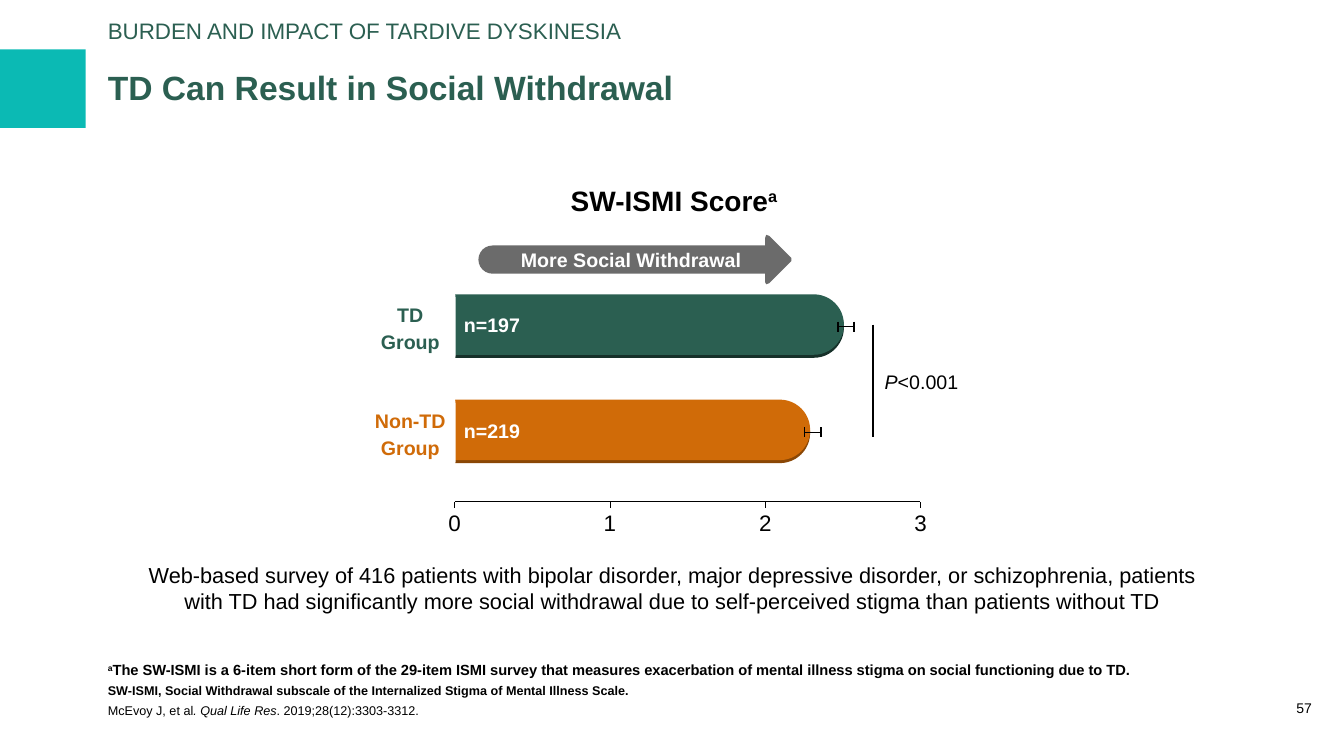
from dataclasses import dataclass

from lxml import etree
from pptx import Presentation
from pptx.chart.data import CategoryChartData
from pptx.dml.color import RGBColor
from pptx.enum.chart import XL_CHART_TYPE, XL_TICK_MARK
from pptx.enum.shapes import MSO_CONNECTOR, MSO_SHAPE
from pptx.enum.text import MSO_ANCHOR, PP_ALIGN
from pptx.oxml import parse_xml
from pptx.oxml.ns import nsdecls, qn
from pptx.util import Emu, Pt

PX = 9144  # 100 px to the inch
RECT, ROUNDED, ROUND_END = MSO_SHAPE.RECTANGLE, MSO_SHAPE.ROUNDED_RECTANGLE, MSO_SHAPE.ROUND_2_SAME_RECTANGLE
LEFT, CENTER = PP_ALIGN.LEFT, PP_ALIGN.CENTER
TOP, MIDDLE, BOTTOM = MSO_ANCHOR.TOP, MSO_ANCHOR.MIDDLE, MSO_ANCHOR.BOTTOM
BAR_CHART, STRAIGHT = XL_CHART_TYPE.BAR_CLUSTERED, MSO_CONNECTOR.STRAIGHT
TICK_OUTSIDE = XL_TICK_MARK.OUTSIDE


@dataclass(frozen=True)
class Theme:
    font: str = "Arial"
    teal: str = "0BBAB4"
    green: str = "2B5F51"
    dark_green: str = "163029"
    orange: str = "D06B08"
    dark_orange: str = "8A4705"
    gray: str = "6B6B6B"
    black: str = "000000"
    white: str = "FFFFFF"
    title: float = 24
    heading: float = 20
    section: float = 16
    body: float = 15.5
    label: float = 14
    note: float = 10.5
    page: float = 10
    source: float = 9


T = Theme()


@dataclass(frozen=True)
class Run:
    text: str
    size: float
    color: str = T.black
    bold: bool = False
    italic: bool = False
    sup: bool = False
    break_before: bool = False


@dataclass(frozen=True)
class Group:
    name: str
    n: int
    mid: int
    length: int
    color: str
    shade: str


@dataclass(frozen=True)
class TextBox:
    box: tuple[int, int, int, int]
    paras: list[list[Run]]
    align: PP_ALIGN = LEFT
    anchor: MSO_ANCHOR = TOP
    inset: bool = False
    wrap: bool = True
    spacing: float | Pt | None = None
    after: float = 0


def px(*values: int) -> list[Emu]:
    return [Emu(v * PX) for v in values]


def rgb(color: str) -> RGBColor:
    return RGBColor.from_string(color)


def write(sp, t: TextBox) -> None:
    tf = sp.text_frame
    tf.word_wrap, tf.vertical_anchor = t.wrap, t.anchor
    if not t.inset:
        tf.margin_left = tf.margin_right = tf.margin_top = tf.margin_bottom = 0
    for i, runs in enumerate(t.paras):
        p = tf.add_paragraph() if i else tf.paragraphs[0]
        p.alignment, p.space_after = t.align, Pt(t.after)
        if t.spacing:
            p.line_spacing = t.spacing
        for run in runs:
            if run.break_before:
                p.add_line_break()
            r = p.add_run()
            r.text = run.text
            f = r.font
            f.name, f.size, f.bold, f.italic = T.font, Pt(run.size), run.bold, run.italic
            f.color.rgb = rgb(run.color)
            if run.sup:
                r._r.get_or_add_rPr().set("baseline", "30000")


def add_text(s, t: TextBox) -> None:
    write(s.shapes.add_textbox(*px(*t.box)), t)


def paint(sp, color: str) -> None:
    sp.shadow.inherit = False
    sp.fill.solid()
    sp.fill.fore_color.rgb = rgb(color)
    sp.line.fill.background()


def add_block(s, kind: MSO_SHAPE, box: tuple[int, int, int, int], color: str):
    sp = s.shapes.add_shape(kind, *px(*box))
    paint(sp, color)
    return sp


def add_bar(s, x: int, y: int, w: int, h: int, color: str, turn: int) -> None:
    """Horizontal bar with one round end, made by turning an upright shape."""
    sp = add_block(s, ROUND_END, (x + (w - h) // 2, y + (h - w) // 2, h, w), color)
    sp.adjustments[0], sp.adjustments[1] = 0.5, 0
    sp.rotation = turn


def add_line(s, x1: int, y1: int, x2: int, y2: int) -> None:
    line = s.shapes.add_connector(STRAIGHT, *px(x1, y1, x2, y2))
    line.line.color.rgb = rgb(T.black)
    line.line.width = Pt(1.25)
    etree.SubElement(line._element.spPr, qn("a:effectLst"))


def add_score_chart(s) -> None:
    data = CategoryChartData()
    data.categories = ["1"]
    data.add_series("Series 1", [2.52])
    chart = s.shapes.add_chart(BAR_CHART, *px(418, 221, 514, 315), data).chart
    chart.has_legend = chart.has_title = False
    chart.font.name, chart.font.size = T.font, Pt(T.page)
    chart.font.color.rgb = rgb(T.black)
    plot = chart.plots[0]
    plot.gap_width, plot.vary_by_categories = 219, False
    fill = plot.series[0].format.fill
    fill.solid()
    fill.fore_color.rgb = rgb(T.white)
    chart.category_axis.visible = False
    axis = chart.value_axis
    axis.minimum_scale, axis.maximum_scale, axis.major_unit = 0, 3, 1
    axis.has_major_gridlines = False
    axis.major_tick_mark = TICK_OUTSIDE
    axis.format.line.color.rgb = rgb(T.black)
    axis.format.line.width = Pt(0.5)
    f = axis.tick_labels.font
    f.name, f.size = T.font, Pt(T.section)
    f.color.rgb = rgb(T.black)
    # Fixed inner plot area
    area = chart._chartSpace.find(".//" + qn("c:plotArea"))
    for old in area.findall(qn("c:layout")):
        area.remove(old)
    places = {"x": 0.064, "y": 0.049, "w": 0.899, "h": 0.83}
    parts = '<c:layoutTarget val="inner"/><c:xMode val="edge"/><c:yMode val="edge"/>'
    parts += "".join(f'<c:{k} val="{v}"/>' for k, v in places.items())
    area.insert(0, parse_xml(f'<c:layout {nsdecls("c")}><c:manualLayout>{parts}</c:manualLayout></c:layout>'))


def add_group(s, g: Group) -> None:
    x, h = 441, 60
    for drop, color in ((3, g.shade), (0, g.color)):
        add_bar(s, x, g.mid - h // 2 + drop, g.length, h, color, 90)
    # Name, covering the square end of the bar
    box = (362, g.mid - 45, 90, 94)
    sp = add_block(s, ROUNDED, box, T.white)
    sp.adjustments[0] = 0.21
    name = [Run(g.name, T.label, g.color, True), Run("Group", T.label, g.color, True, break_before=True)]
    write(sp, TextBox(box, [name], CENTER, MIDDLE, wrap=False, spacing=Pt(19)))
    # Error bar
    low, high, y = x + g.length - 6, x + g.length + 10, g.mid + 2
    add_line(s, low, y, high, y)
    for cap in (low, high):
        add_line(s, cap, y - 5, cap, y + 5)
    add_text(s, TextBox((450, g.mid - 16, 76, 34), [[Run(f"n={g.n}", T.label, T.white, True)]],
                        CENTER, inset=True, wrap=False))


ARROWHEAD = [(728, 266), (728, 249), (759, 249), (759, 236), (760, 233), (763, 234), (785, 256),
             (785, 259), (763, 281), (760, 282), (759, 280), (759, 266)]
GROUPS = [Group("Non-TD", 219, 427, 363, T.orange, T.dark_orange),
          Group("TD", 197, 322, 396, T.green, T.dark_green)]
TEXTS = [
    TextBox((107, 39, 986, 99), [[Run("TD Can Result in Social Withdrawal", T.title, T.green, True)]],
            anchor=MIDDLE, spacing=0.95),
    TextBox((1277, 668, 33, 43), [[Run("57", T.page)]], CENTER, BOTTOM, spacing=0.95),
    TextBox((107, 18, 1026, 28), [[Run("BURDEN AND IMPACT OF TARDIVE DYSKINESIA", T.section, T.green)]],
            anchor=MIDDLE, spacing=0.95),
    TextBox((124, 552, 1085, 62), [[Run(
        "Web-based survey of 416 patients with bipolar disorder, major depressive disorder, or schizophrenia, "
        "patients with TD had significantly more social withdrawal due to self-perceived stigma than patients "
        "without TD", T.body)]], CENTER, inset=True),
    TextBox((867, 362, 94, 34), [[Run("P", T.label, italic=True), Run("<0.001", T.label)]],
            CENTER, inset=True, wrap=False),
    TextBox((362, 177, 613, 44), [[Run("SW-ISMI Score", T.heading, bold=True),
                                   Run("a", T.heading, bold=True, sup=True)]], CENTER, inset=True),
    TextBox((501, 248, 250, 20), [[Run("More Social Withdrawal", T.label, T.white, True)]], CENTER, MIDDLE),
    TextBox((107, 675, 1156, 37), [
        [Run("a", T.note, bold=True, sup=True),
         Run("The SW-ISMI is a 6-item short form of the 29-item ISMI survey that measures exacerbation of mental "
             "illness stigma on social functioning due to TD.", T.note, bold=True)],
        [Run("SW-ISMI, Social Withdrawal subscale of the Internalized Stigma of Mental Illness Scale.",
             T.source, bold=True)],
        [Run("McEvoy J, et al", T.source), Run(". Qual Life Res", T.source, italic=True),
         Run(". 2019;28(12):3303-3312.", T.source)]], anchor=BOTTOM, after=3),
]


def main() -> None:
    prs = Presentation()
    prs.slide_width, prs.slide_height = px(1333, 750)
    s = prs.slides.add_slide(prs.slide_layouts[6])
    add_block(s, RECT, (0, 49, 85, 78), T.teal)
    # Score axis and bars
    add_score_chart(s)
    for g in GROUPS:
        add_group(s, g)
    add_line(s, 866, 322, 866, 434)
    # Direction arrow
    add_bar(s, 475, 244, 289, 28, T.gray, 270)
    outline = s.shapes.build_freeform(*ARROWHEAD[0], scale=PX)
    outline.add_line_segments(ARROWHEAD[1:], close=True)
    paint(outline.convert_to_shape(), T.gray)
    # Wording
    for t in TEXTS:
        add_text(s, t)
    prs.save("out.pptx")


if __name__ == "__main__":
    main()
